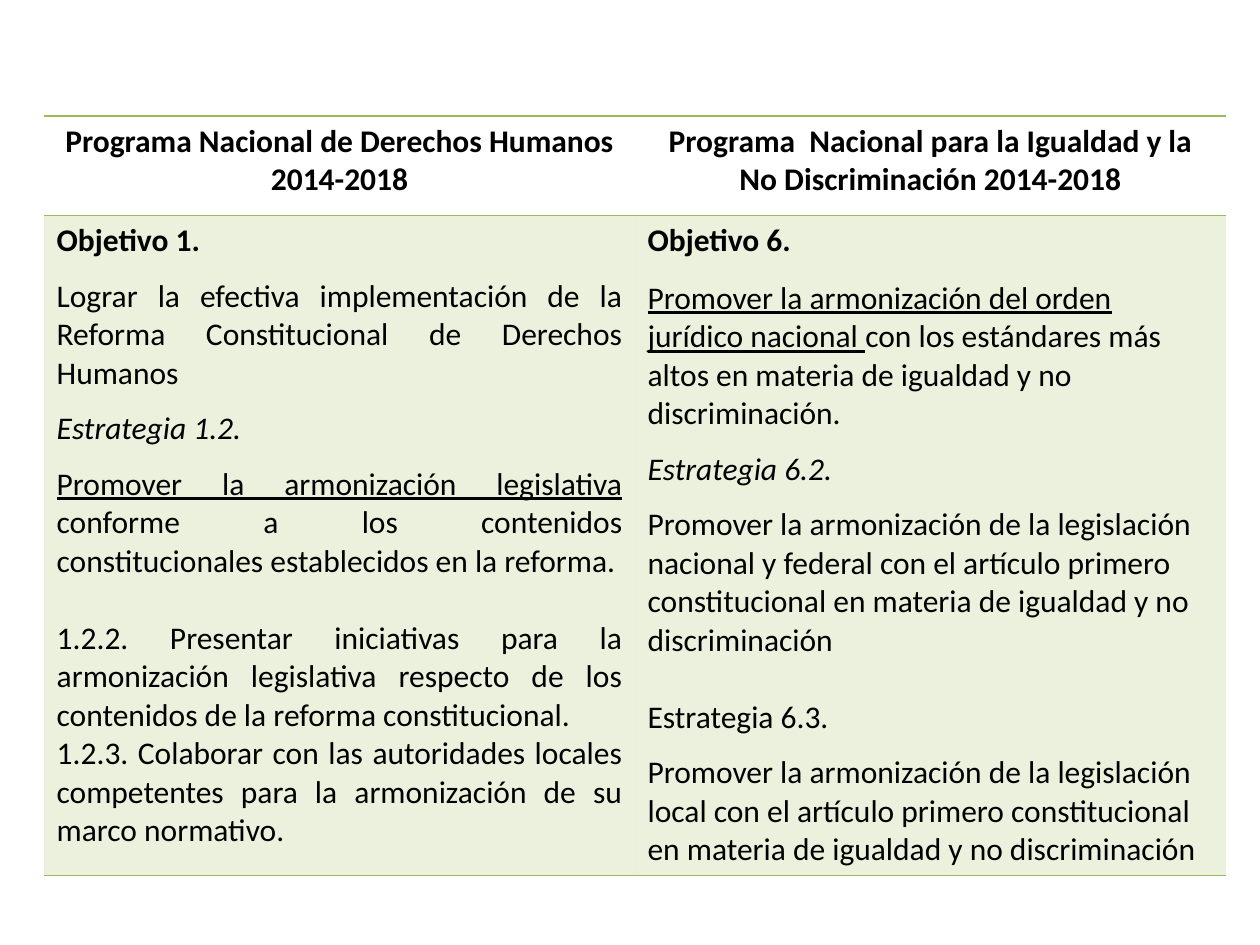
from pptx import Presentation
from pptx.dml.color import RGBColor as Rgb
from pptx.enum.text import PP_ALIGN as Al
from pptx.oxml import parse_xml
from pptx.oxml.ns import nsdecls
from pptx.util import Inches, Pt

HUES = {"ink": "000000", "green": "9BBB59"}
GAP, WIDE, LINE = 9.8, 11, 22  # points between paragraphs

# Each paragraph is (space before, (text, format), ...)
HEADS = [
    "Programa Nacional de Derechos Humanos 2014-2018",
    "Programa  Nacional para la Igualdad y la No Discriminación 2014-2018",
]
RIGHTS = [
    (0, ("Objetivo 1.", {"bold": True})),
    (GAP, ("Lograr la efectiva implementación de la Reforma Constitucional "
           "de Derechos Humanos", {})),
    (GAP, ("Estrategia 1.2.", {"italic": True})),
    (GAP, ("Promover la armonización legislativa ", {"under": True}),
     ("conforme a los contenidos constitucionales\u00a0establecidos en la reforma.", {})),
    (LINE, ("1.2.2. Presentar iniciativas para la armonización legislativa "
            "respecto de los contenidos de la reforma constitucional.", {})),
    (0, ("1.2.3. Colaborar con las autoridades locales competentes para la "
         "armonización de su marco normativo.", {})),
]
EQUAL = [
    (0, ("Objetivo 6.", {"bold": True})),
    (WIDE, ("Promover la armonización del orden jurídico nacional ", {"under": True}),
     ("con los estándares más altos en materia de igualdad y no discriminación.", {})),
    (GAP, ("Estrategia 6.2.", {"italic": True})),
    (GAP, ("Promover la armonización de la legislación nacional y federal con el "
           "artículo primero constitucional en materia de igualdad y no "
           "discriminación", {})),
    (LINE, ("Estrategia 6.3.", {})),
    (GAP, ("Promover la armonización de la legislación local con el artículo "
           "primero constitucional en materia de igualdad y no discriminación", {})),
]


def write(para, text, bold=False, italic=False, under=False, size=18, hue="ink"):
    run = para.add_run()
    run.text = text
    font = run.font
    font.name, font.size = "Calibri", Pt(size)
    font.bold, font.italic, font.underline = bold, italic, under
    font.color.rgb = Rgb.from_string(HUES[hue])


class Deck:
    def __init__(self, wide=10, high=7.5):
        self.show = Presentation()
        self.show.slide_width, self.show.slide_height = Inches(wide), Inches(high)
        self.slide = self.show.slides.add_slide(self.show.slide_layouts[6])

    def table(self, left, top, cols, rows):
        frame = self.slide.shapes.add_table(
            len(rows), len(cols), Inches(left), Inches(top),
            Inches(sum(cols)), Inches(sum(rows)))
        table = frame.table
        table.first_row = table.horz_banding = False
        for col, width in zip(table.columns, cols):
            col.width = Inches(width)
        for row, height in zip(table.rows, rows):
            row.height = Inches(height)
        return table

    def cell(self, cell, paras, align, edges, tint=None):
        for i, (gap, *runs) in enumerate(paras):
            frame = cell.text_frame
            para = frame.add_paragraph() if i else frame.paragraphs[0]
            para.alignment, para.space_before = align, Pt(gap)
            for text, style in runs:
                write(para, text, **style)
        self.tint(cell, tint)
        self.rule(cell, edges)

    def tint(self, cell, share):
        if share is None:
            cell.fill.background()
            return
        cell.fill.solid()
        cell.fill.fore_color.rgb = Rgb.from_string(HUES["green"])
        color = cell._tc.tcPr.find(".//{*}srgbClr")
        color.append(parse_xml(f'<a:alpha {nsdecls("a")} val="{share * 1000}"/>'))

    def rule(self, cell, edges):
        ink = f'<a:solidFill><a:srgbClr val="{HUES["green"]}"/></a:solidFill>'
        for i, side in enumerate("LRTB"):
            fill = ink if side in edges else "<a:noFill/>"
            cell._tc.tcPr.insert(i, parse_xml(
                f'<a:ln{side} {nsdecls("a")} w="{Pt(1)}">{fill}</a:ln{side}>'))


def main():
    deck = Deck()
    grid = deck.table(0.35, 0.92, cols=[4.69] * 2, rows=[0.79, 5.24])

    # Programme names
    for i, head in enumerate(HEADS):
        deck.cell(grid.cell(0, i), [(0, (head, {"bold": True}))], Al.CENTER, "TB")

    # Goals and strategies
    for i, (paras, align) in enumerate([(RIGHTS, Al.JUSTIFY), (EQUAL, Al.LEFT)]):
        deck.cell(grid.cell(1, i), paras, align, "TB", tint=20)

    deck.show.save("out.pptx")


if __name__ == "__main__":
    main()
